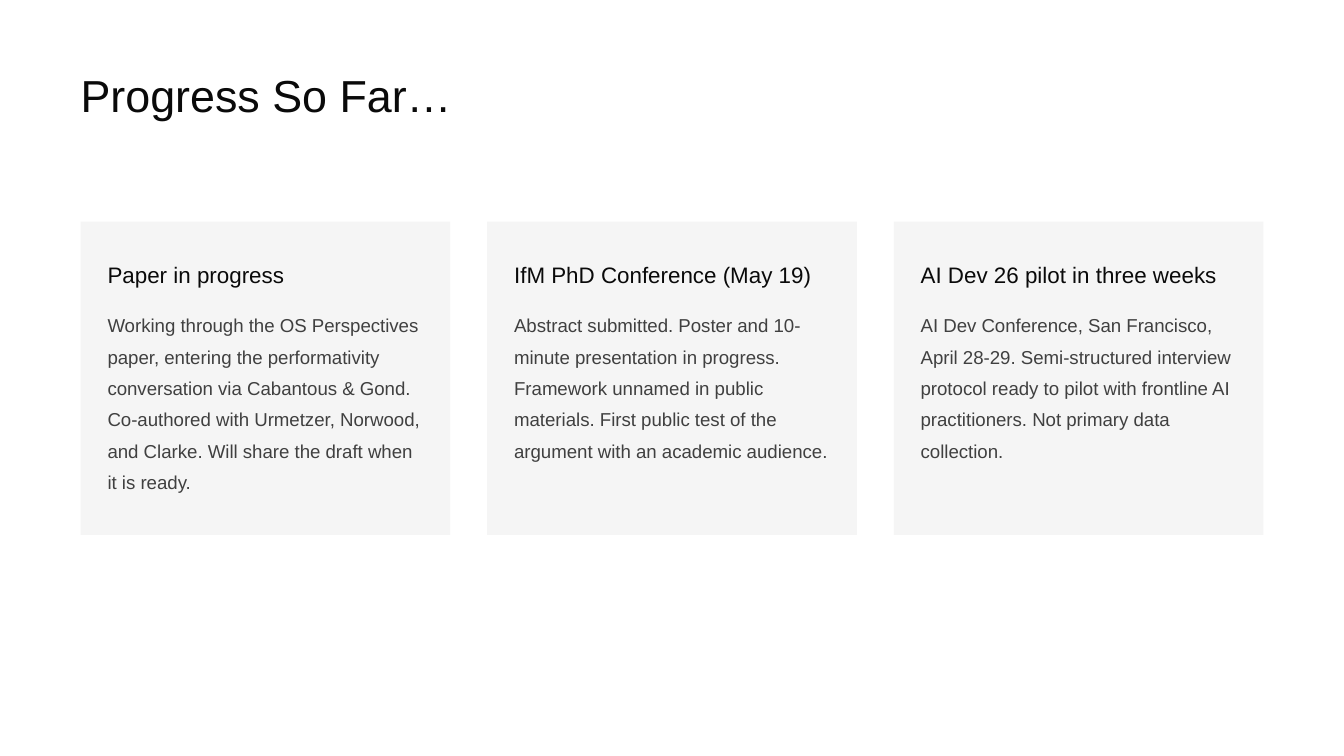
from dataclasses import dataclass
from typing import Any

from pptx import Presentation
from pptx.dml.color import RGBColor
from pptx.enum.shapes import MSO_SHAPE
from pptx.enum.text import MSO_ANCHOR, MSO_AUTO_SIZE, PP_ALIGN
from pptx.util import Emu, Pt

EMU_PER_PX = 4572  # 200 px to the inch


@dataclass(frozen=True)
class Theme:
    font: str = "Arial"
    background: RGBColor = RGBColor(0xFF, 0xFF, 0xFF)
    card: RGBColor = RGBColor(0xF5, 0xF5, 0xF5)
    heading: RGBColor = RGBColor(0x0A, 0x0A, 0x0A)
    body: RGBColor = RGBColor(0x40, 0x40, 0x40)
    title_size: int = 24
    heading_size: int = 12
    body_size: int = 10


@dataclass(frozen=True)
class Box:
    left: int
    top: int
    width: int
    height: int

    def emu(self) -> tuple[Emu, ...]:
        pixels = (self.left, self.top, self.width, self.height)
        return tuple(Emu(value * EMU_PER_PX) for value in pixels)


@dataclass(frozen=True)
class TextStyle:
    size: int
    color: RGBColor
    line_spacing: float
    anchor: MSO_ANCHOR


@dataclass(frozen=True)
class Card:
    heading: str
    body: str


THEME = Theme()
TITLE = TextStyle(THEME.title_size, THEME.heading, 1.0, MSO_ANCHOR.MIDDLE)
HEADING = TextStyle(THEME.heading_size, THEME.heading, 1.2, MSO_ANCHOR.MIDDLE)
BODY = TextStyle(THEME.body_size, THEME.body, 1.4, MSO_ANCHOR.TOP)

SLIDE_WIDTH, SLIDE_HEIGHT = 2000, 1125
MARGIN = 120
CARD_TOP, CARD_WIDTH, CARD_HEIGHT, CARD_GAP = 330, 550, 466, 55
CARD_PADDING = 40

CARDS = (
    Card(
        "Paper in progress",
        "Working through the OS Perspectives paper, entering the performativity "
        "conversation via Cabantous & Gond. Co-authored with Urmetzer, Norwood, "
        "and Clarke. Will share the draft when it is ready.",
    ),
    Card(
        "IfM PhD Conference (May 19)",
        "Abstract submitted. Poster and 10-minute presentation in progress. "
        "Framework unnamed in public materials. First public test of the "
        "argument with an academic audience.",
    ),
    Card(
        "AI Dev 26 pilot in three weeks",
        "AI Dev Conference, San Francisco, April 28-29. Semi-structured interview "
        "protocol ready to pilot with frontline AI practitioners. Not primary "
        "data collection.",
    ),
)


def set_attributes(target: Any, values: dict[str, Any]) -> None:
    for name, value in values.items():
        setattr(target, name, value)


def write_text(shape: Any, text: str, style: TextStyle) -> None:
    frame = shape.text_frame
    set_attributes(frame, {
        "text": text,
        "word_wrap": True,
        "auto_size": MSO_AUTO_SIZE.NONE,
        "vertical_anchor": style.anchor,
        "margin_left": 0,
        "margin_top": 0,
        "margin_right": 0,
        "margin_bottom": 0,
    })
    paragraph = frame.paragraphs[0]
    set_attributes(paragraph, {
        "alignment": PP_ALIGN.LEFT,
        "line_spacing": style.line_spacing,
        "space_before": Pt(0),
    })
    font = paragraph.runs[0].font
    set_attributes(font, {"name": THEME.font, "size": Pt(style.size)})
    font.color.rgb = style.color


def add_text(slide: Any, box: Box, text: str, style: TextStyle) -> None:
    write_text(slide.shapes.add_textbox(*box.emu()), text, style)


def add_card(slide: Any, left: int, card: Card) -> None:
    box = Box(left, CARD_TOP, CARD_WIDTH, CARD_HEIGHT)
    panel = slide.shapes.add_shape(MSO_SHAPE.RECTANGLE, *box.emu())
    panel.shadow.inherit = False
    panel.fill.solid()
    panel.fill.fore_color.rgb = THEME.card
    panel.line.fill.background()

    text_left = left + CARD_PADDING
    text_width = CARD_WIDTH - 2 * CARD_PADDING
    add_text(slide, Box(text_left, 364, text_width, 80), card.heading, HEADING)
    add_text(slide, Box(text_left, 454, text_width, 300), card.body, BODY)


def main() -> None:
    presentation = Presentation()
    presentation.slide_width = Emu(SLIDE_WIDTH * EMU_PER_PX)
    presentation.slide_height = Emu(SLIDE_HEIGHT * EMU_PER_PX)
    slide = presentation.slides.add_slide(presentation.slide_layouts[5])
    slide.background.fill.solid()
    slide.background.fill.fore_color.rgb = THEME.background

    # Title
    title = slide.shapes.title
    title_box = Box(MARGIN, 100, SLIDE_WIDTH - 2 * MARGIN, 80)
    set_attributes(title, dict(zip(("left", "top", "width", "height"), title_box.emu())))
    write_text(title, "Progress So Far…", TITLE)

    # Progress cards
    for index, card in enumerate(CARDS):
        add_card(slide, MARGIN + index * (CARD_WIDTH + CARD_GAP), card)

    presentation.save("out.pptx")


if __name__ == "__main__":
    main()
